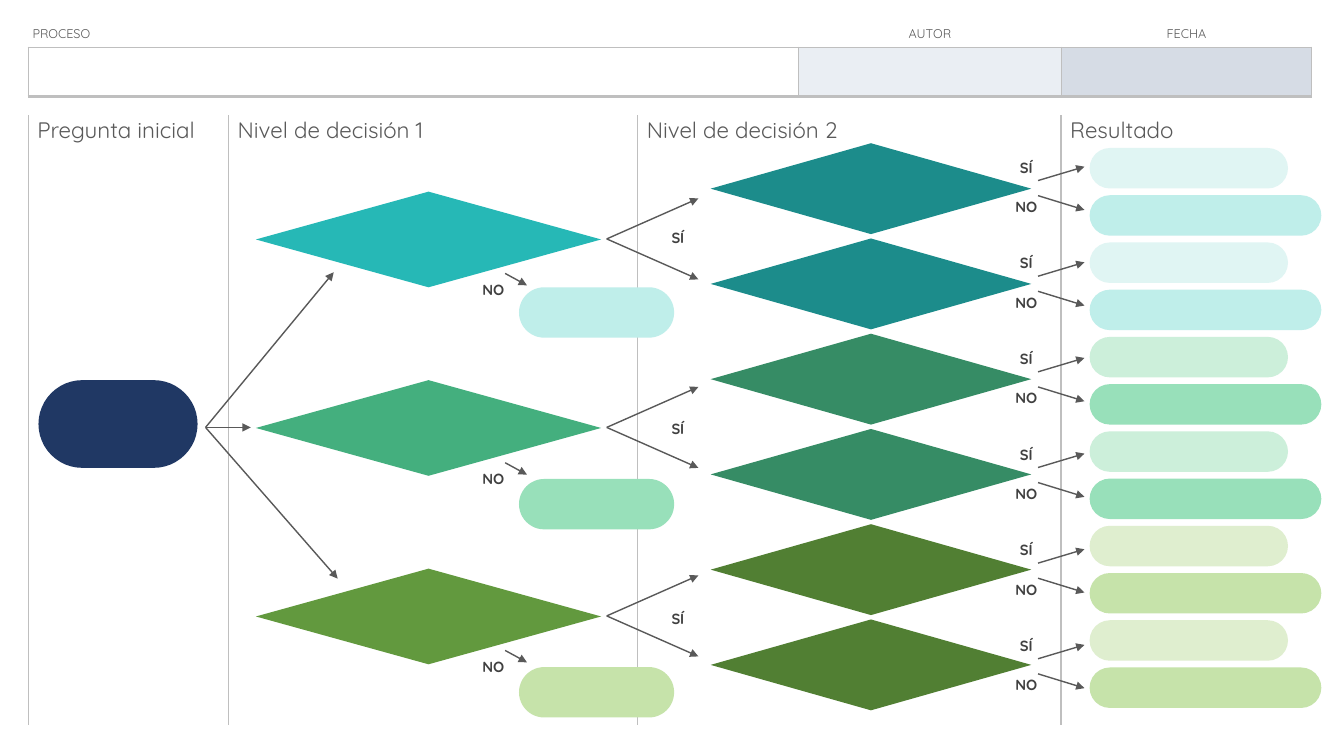
from dataclasses import dataclass

from lxml.etree import SubElement
from pptx import Presentation
from pptx.dml.color import RGBColor
from pptx.enum.shapes import MSO_CONNECTOR, MSO_SHAPE
from pptx.enum.text import MSO_ANCHOR as ANCHOR, PP_ALIGN as ALIGN
from pptx.oxml.ns import qn
from pptx.slide import Slide
from pptx.table import Table, _Cell as Cell
from pptx.text.text import _Paragraph as Paragraph
from pptx.util import Cm, Pt

FONT = "Quicksand"
COLORS = {
    "grid": "BFBFBF", "text": "595959", "label": "404040", "start": "203864",
    "process": "FFFFFF", "author": "EAEEF3", "date": "D6DCE5",
    "teal": "26B8B6", "teal_dark": "1C8C8B", "teal_yes": "E0F5F3", "teal_no": "BFEEEA",
    "green": "44AF7E", "green_dark": "368C65", "green_yes": "CCEFDA", "green_no": "98E0BA",
    "olive": "62993E", "olive_dark": "517F33", "olive_yes": "DFEECF", "olive_no": "C6E3AA",
}


@dataclass
class Branch:
    """One first-level decision; lengths in cm."""
    color: str
    outcome_top: float
    no_top: float
    start_tip: tuple[float, float]


@dataclass
class Column:
    title: str
    width: float
    fill: str = ""


BRANCHES = [
    Branch("teal", 7.24, 6.91, (8.41, 6.86)),
    Branch("green", 12.07, 11.68, (6.32, 10.77)),
    Branch("olive", 16.81, 16.41, (8.51, 14.58)),
]
LEVELS = [
    Column("Pregunta inicial", 5.05),
    Column("Nivel de decisión 1", 10.31),
    Column("Nivel de decisión 2", 10.67),
    Column("Resultado", 6.3),
]
HEADER = [
    Column("PROCESO", 19.41, "process"),
    Column("AUTOR", 6.63, "author"),
    Column("FECHA", 6.3, "date"),
]


def rgb(name: str) -> RGBColor:
    return RGBColor.from_string(COLORS[name])


def style(p: Paragraph, size: float, color: str, bold: bool = False) -> None:
    p.font.name, p.font.size, p.font.bold = FONT, Pt(size), bold
    p.font.color.rgb = rgb(color)


def add_block(s: Slide, kind: MSO_SHAPE, x: float, y: float, w: float, h: float,
              color: str) -> None:
    sp = s.shapes.add_shape(kind, Cm(x), Cm(y), Cm(w), Cm(h))
    sp.shadow.inherit = False
    sp.fill.solid()
    sp.fill.fore_color.rgb = rgb(color)
    sp.line.fill.background()
    if kind == MSO_SHAPE.ROUNDED_RECTANGLE:
        sp.adjustments[0] = 0.5


def add_diamond(s: Slide, x: float, y: float, w: float, h: float, color: str) -> None:
    add_block(s, MSO_SHAPE.DIAMOND, x, y, w, h, color)


def add_pill(s: Slide, x: float, y: float, w: float, h: float, color: str) -> None:
    add_block(s, MSO_SHAPE.ROUNDED_RECTANGLE, x, y, w, h, color)


def add_arrow(s: Slide, x1: float, y1: float, x2: float, y2: float) -> None:
    c = s.shapes.add_connector(MSO_CONNECTOR.STRAIGHT, Cm(x1), Cm(y1), Cm(x2), Cm(y2))
    c.line.color.rgb = rgb("text")
    c.line.width = Pt(1)
    SubElement(c.line._get_or_add_ln(), qn("a:tailEnd"), type="triangle")
    SubElement(c._element.spPr, qn("a:effectLst"))


def add_label(s: Slide, text: str, x: float, y: float) -> None:
    tf = s.shapes.add_textbox(Cm(x), Cm(y), Cm(1.09), Cm(0.76)).text_frame
    tf.word_wrap = True
    tf.vertical_anchor = ANCHOR.MIDDLE
    tf.margin_left = tf.margin_right = tf.margin_top = tf.margin_bottom = Cm(0.05)
    p = tf.paragraphs[0]
    p.text, p.alignment = text, ALIGN.CENTER
    style(p, 10.5, "label", bold=True)


def set_cell(cell: Cell, borders: dict[str, float], fill: str = "") -> None:
    """Borders map a side (L, R, T, B) to its width in points."""
    tc_pr = cell._tc.get_or_add_tcPr()
    for side in "LRTB":
        ln = SubElement(tc_pr, qn(f"a:ln{side}"), w=str(Pt(borders.get(side, 0))))
        if side in borders:
            solid = SubElement(ln, qn("a:solidFill"))
            SubElement(solid, qn("a:srgbClr"), val=COLORS["grid"])
        else:
            SubElement(ln, qn("a:noFill"))
    if fill:
        cell.fill.solid()
        cell.fill.fore_color.rgb = rgb(fill)
    else:
        cell.fill.background()


def add_grid(s: Slide, top: float, columns: list[Column], heights: list[float],
             size: float, inset: float) -> Table:
    """Two-row table with the column titles in its first row."""
    width = sum(c.width for c in columns)
    table = s.shapes.add_table(2, len(columns), Cm(0.71), Cm(top), Cm(width),
                               Cm(sum(heights))).table
    table.first_row = table.horz_banding = False
    for row, height in zip(table.rows, heights):
        row.height = Cm(height)
    for i, column in enumerate(columns):
        table.columns[i].width = Cm(column.width)
        cell = table.cell(0, i)
        cell.margin_left, cell.margin_right = Cm(inset), Cm(0.03)
        cell.margin_top, cell.margin_bottom = Cm(0.03), 0
        p = cell.text_frame.paragraphs[0]
        p.text = column.title
        style(p, size, "text")
    return table


def add_levels(s: Slide) -> None:
    table = add_grid(s, 2.9, LEVELS, [1.17, 14.2], 16, 0.23)
    for i in range(len(LEVELS)):
        borders = {"L": 1} if i == len(LEVELS) - 1 else {"L": 1, "R": 1}
        for row in range(2):
            set_cell(table.cell(row, i), borders)


def add_header(s: Slide) -> None:
    table = add_grid(s, 0.48, HEADER, [0.71, 1.24], 9, 0.03)
    for i, column in enumerate(HEADER):
        title = table.cell(0, i)
        set_cell(title, {"B": 1})
        set_cell(table.cell(1, i), {"L": 1, "R": 1, "T": 1, "B": 2.25}, column.fill)
        title.vertical_anchor = ANCHOR.MIDDLE
        if i:
            title.text_frame.paragraphs[0].alignment = ALIGN.CENTER
        else:
            title.margin_left = Cm(0.11)


def add_second_decision(s: Slide, i: int, color: str) -> None:
    add_diamond(s, 17.91, 3.61 + 2.4 * i, 8.08, 2.29, color + "_dark")
    pill_top = 3.73 + 2.38 * i
    add_pill(s, 27.46, pill_top, 5, 1.02, color + "_yes")
    add_pill(s, 27.46, pill_top + 1.19, 5.84, 1.02, color + "_no")
    top = 3.84 + 2.41 * i
    add_label(s, "SÍ", 25.32, top)
    add_label(s, "NO", 25.32, top + 0.99)
    add_arrow(s, 26.16, top + 0.71, 27.33, top + 0.36)
    add_arrow(s, 26.16, top + 1.09, 27.33, top + 1.45)


def add_branch(s: Slide, i: int, branch: Branch) -> None:
    add_arrow(s, 5.18, 10.77, *branch.start_tip)
    add_diamond(s, 6.45, 4.83 + 4.75 * i, 8.7, 2.41, branch.color)
    add_pill(s, 13.08, branch.outcome_top, 3.91, 1.27, branch.color + "_no")
    add_label(s, "NO", 11.89, branch.no_top)
    add_arrow(s, 12.73, branch.no_top - 0.02, 13.28, branch.no_top + 0.28)
    middle = 6.02 + 4.75 * i
    for k, rise in enumerate((-1.02, 1.02)):
        add_arrow(s, 15.29, middle, 17.6, middle + rise)
        add_second_decision(s, 2 * i + k, branch.color)
    add_label(s, "SÍ", 16.54, 5.61 + 4.8 * i)


def main() -> None:
    prs = Presentation()
    prs.slide_width, prs.slide_height = Cm(33.87), Cm(19.05)
    s = prs.slides.add_slide(prs.slide_layouts[6])
    add_levels(s)
    add_header(s)
    add_pill(s, 0.97, 9.58, 4.01, 2.21, "start")
    for i, branch in enumerate(BRANCHES):
        add_branch(s, i, branch)
    prs.save("out.pptx")


if __name__ == "__main__":
    main()
